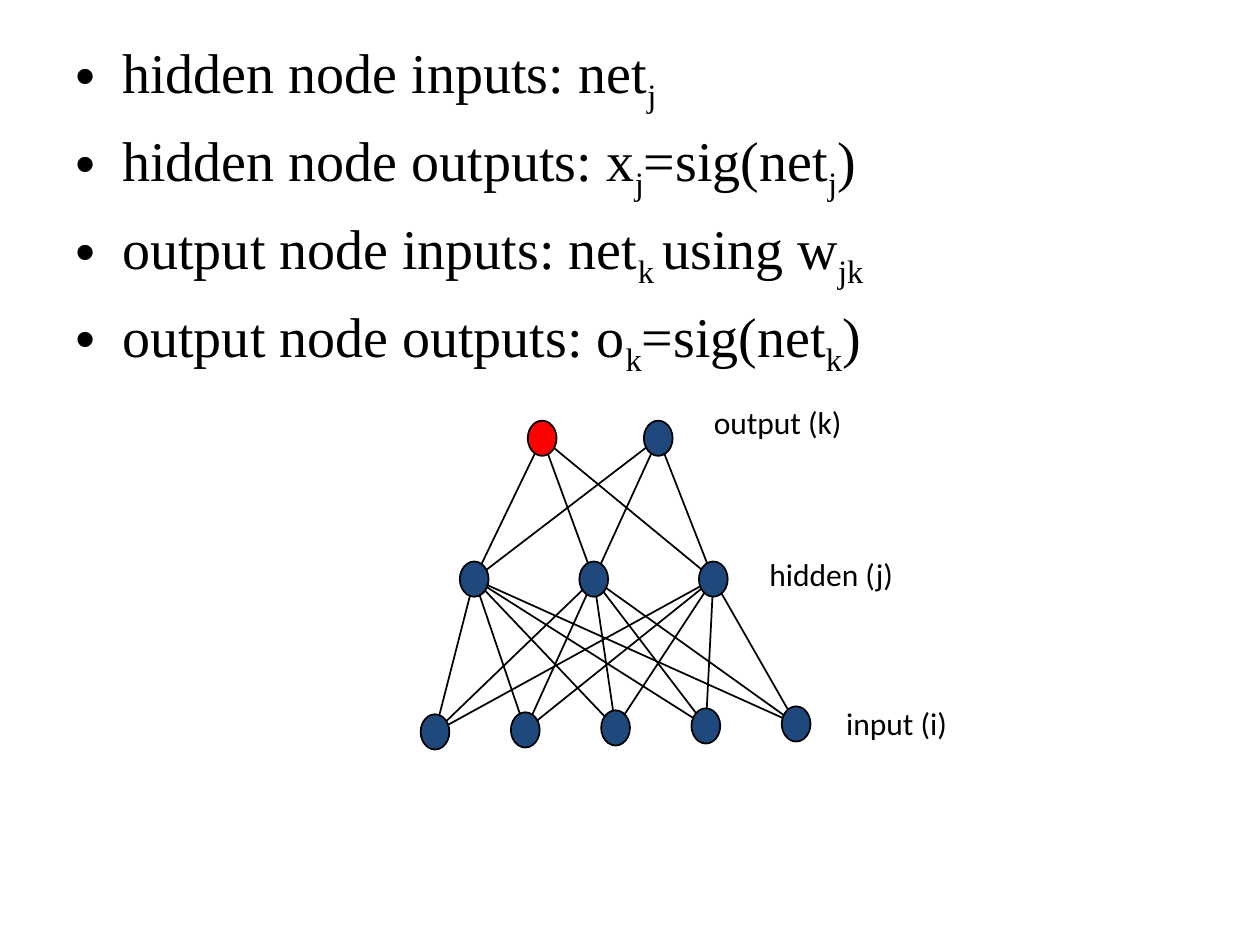
from itertools import pairwise, product

from lxml import etree
from pptx import Presentation
from pptx.dml.color import RGBColor
from pptx.enum import shapes, text
from pptx.oxml.ns import qn
from pptx.util import Cm, Pt

COLORS = {"ink": "000000", "node": "1F497D", "active": "FF0000"}
BODY_FONT = {"name": "Times New Roman", "size": Pt(32)}
LABEL_FONT = {"name": "Calibri", "size": Pt(18)}
NODE_WIDTH, NODE_HEIGHT = 0.58, 0.71

# Underscores separate normal text from subscripts, alternately.
FORMULAS = [
    "hidden node inputs: net_j",
    "hidden node outputs: x_j_=sig(net_j_)",
    "output node inputs: net_k _using w_jk",
    "output node outputs: o_k_=sig(net_k_)",
]
LAYERS = [
    {"count": 2, "left": 2.16, "top": 0, "step": 2.34, "rise": 0,
     "label": "output (k)", "label_box": (5.66, -0.48, 3.1, 1.04)},
    {"count": 3, "left": 0.79, "top": 2.84, "step": 2.41, "rise": 0,
     "label": "hidden (j)", "label_box": (6.78, 2.59, 3, 1.04)},
    {"count": 5, "left": 0, "top": 5.92, "step": 1.82, "rise": 0.04,
     "label": "input (i)", "label_box": (8.33, 5.59, 2.57, 1.04)},
]


def color(name):
    """Return the named colour."""
    return RGBColor.from_string(COLORS[name])


def add_run(paragraph, words, font_format):
    """Add a run of text with the given font values."""
    run = paragraph.add_run()
    run.text = words
    for attribute, value in font_format.items():
        setattr(run.font, attribute, value)
    run.font.color.rgb = color("ink")
    return run


def format_bullet(paragraph):
    """Give a paragraph a hanging bullet and proportional space before it."""
    properties = paragraph._p.get_or_add_pPr()
    properties.set("marL", str(Cm(0.95)))
    properties.set("indent", str(-Cm(0.95)))
    spacing = etree.SubElement(properties, qn("a:spcBef"))
    etree.SubElement(spacing, qn("a:spcPct"), val="20000")
    etree.SubElement(properties, qn("a:buFont"), typeface="Arial")
    etree.SubElement(properties, qn("a:buChar"), char="•")


def add_formulas(slide, left, top, width, height):
    """Write the bulleted formulas in the given box."""
    box = slide.shapes.add_textbox(Cm(left), Cm(top), Cm(width), Cm(height))
    frame = box.text_frame
    frame.word_wrap = True
    for index, formula in enumerate(FORMULAS):
        paragraph = frame.add_paragraph() if index else frame.paragraphs[0]
        format_bullet(paragraph)
        for part, words in enumerate(formula.split("_")):
            run = add_run(paragraph, words, BODY_FONT)
            if part % 2:
                run.font._element.set("baseline", "-25000")


def add_edge(slide, start, end):
    """Draw a line between two node centres."""
    points = [Cm(value) for value in (*start, *end)]
    edge = slide.shapes.add_connector(shapes.MSO_CONNECTOR.STRAIGHT, *points)
    edge.line.color.rgb = color("ink")
    edge.line.width = Pt(1)
    etree.SubElement(edge._element.spPr, qn("a:effectLst"))


def add_node(slide, center, fill):
    """Draw a node around its centre."""
    x, y = center
    node = slide.shapes.add_shape(
        shapes.MSO_SHAPE.OVAL, Cm(x - NODE_WIDTH / 2), Cm(y - NODE_HEIGHT / 2),
        Cm(NODE_WIDTH), Cm(NODE_HEIGHT))
    node.shadow.inherit = False
    node.fill.solid()
    node.fill.fore_color.rgb = color(fill)
    node.line.color.rgb = color("ink")
    node.line.width = Pt(1)


def add_label(slide, words, left, top, width, height):
    """Write the name of a layer."""
    box = slide.shapes.add_textbox(Cm(left), Cm(top), Cm(width), Cm(height))
    frame_format = {"word_wrap": False,
                    "auto_size": text.MSO_AUTO_SIZE.SHAPE_TO_FIT_TEXT}
    for attribute, value in frame_format.items():
        setattr(box.text_frame, attribute, value)
    add_run(box.text_frame.paragraphs[0], words, LABEL_FONT)


def add_network(slide, left, top):
    """Draw the layered network from the given corner."""
    centers = [
        [(left + layer["left"] + index * layer["step"] + NODE_WIDTH / 2,
          top + layer["top"] - index * layer["rise"] + NODE_HEIGHT / 2)
         for index in range(layer["count"])]
        for layer in LAYERS
    ]
    for upper, lower in pairwise(centers):
        for start, end in product(upper, lower):
            add_edge(slide, start, end)
    for row, layer in enumerate(LAYERS):
        for index, center in enumerate(centers[row]):
            add_node(slide, center, "active" if row == index == 0 else "node")
        x, y, width, height = layer["label_box"]
        add_label(slide, layer["label"], left + x, top + y, width, height)


def main():
    """Build and save the slide."""
    presentation = Presentation()
    presentation.slide_width, presentation.slide_height = Cm(25.4), Cm(19.05)
    slide = presentation.slides.add_slide(presentation.slide_layouts[6])
    add_formulas(slide, 1.27, 0.64, 22.86, 12.57)
    add_network(slide, 8.48, 8.48)
    presentation.save("out.pptx")


if __name__ == "__main__":
    main()
